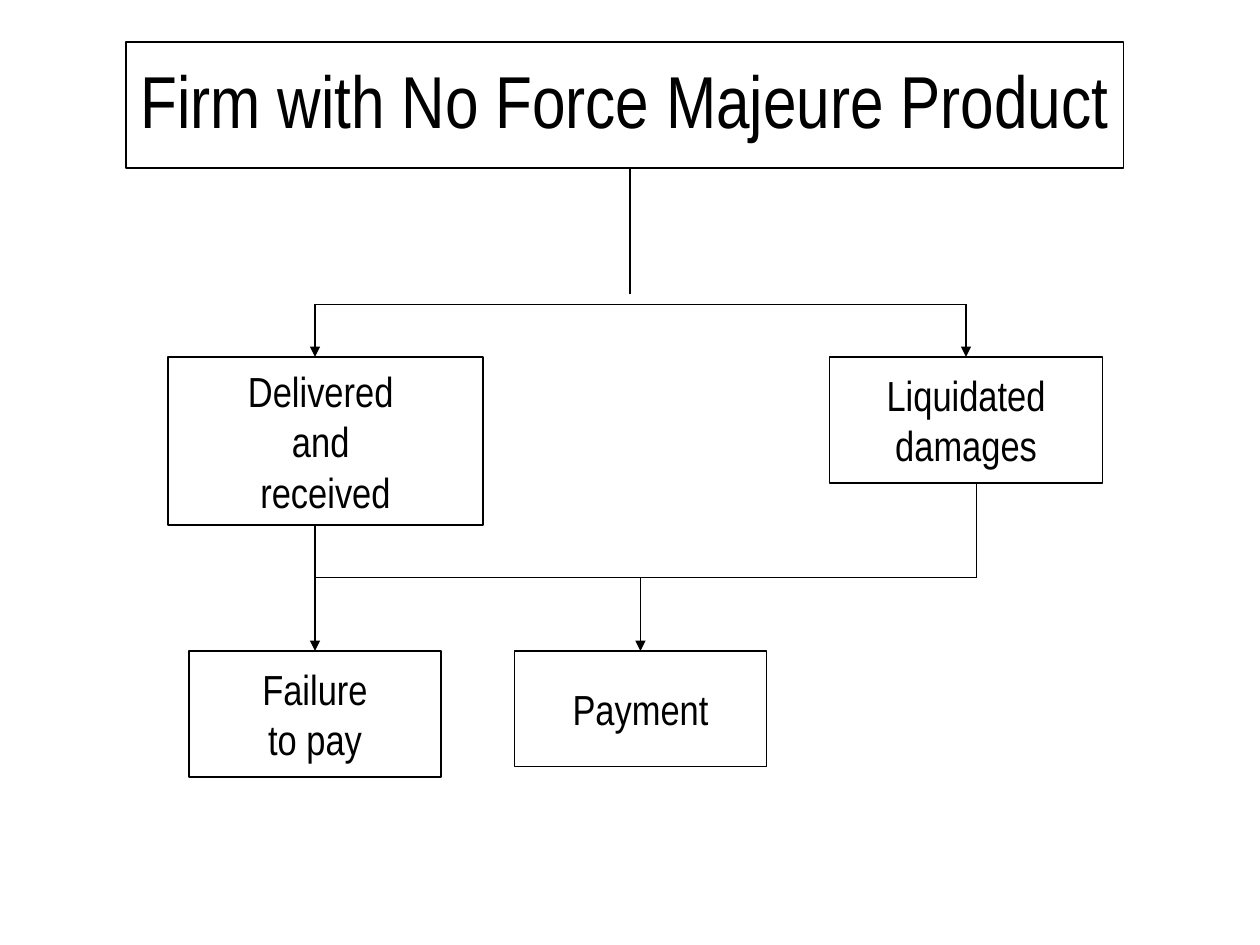
import pptx
import pptx.util
import pptx.dml.color
import pptx.enum.shapes
import pptx.enum.text
import pptx.oxml
import pptx.oxml.ns

PX = 7620  # EMU per px: 120 px to the inch
BLACK = pptx.dml.color.RGBColor(0x00, 0x00, 0x00)
WHITE = pptx.dml.color.RGBColor(0xFF, 0xFF, 0xFF)
FONT = "Arial Narrow"


def write_text(frame, text, size=24, spacing=None, wrap=False):
    """Fill a text frame with centred text, one paragraph a line."""
    frame.word_wrap = wrap
    frame.auto_size = pptx.enum.text.MSO_AUTO_SIZE.NONE
    frame.vertical_anchor = pptx.enum.text.MSO_ANCHOR.MIDDLE
    frame.text = text
    for paragraph in frame.paragraphs:
        paragraph.alignment = pptx.enum.text.PP_ALIGN.CENTER
        paragraph.line_spacing = spacing
        for run in paragraph.runs:
            run.font.name = FONT
            run.font.size = pptx.util.Pt(size)
            run.font.color.rgb = BLACK


class FlowChart:
    def __init__(self, slide, line_width=0.75):
        self.slide = slide
        self.line_width = pptx.util.Pt(line_width)

    def outline(self, line):
        line.color.rgb = BLACK
        line.width = self.line_width

    def title(self, text, left, top, width, height):
        heading = self.slide.shapes.title
        heading.left, heading.top = left * PX, top * PX
        heading.width, heading.height = width * PX, height * PX
        self.outline(heading.line)
        write_text(heading.text_frame, text, size=42, spacing=0.9)

    def box(self, text, left, top, width, height):
        step = self.slide.shapes.add_shape(
            pptx.enum.shapes.MSO_SHAPE.RECTANGLE,
            left * PX, top * PX, width * PX, height * PX)
        step.shadow.inherit = False
        step.fill.solid()
        step.fill.fore_color.rgb = WHITE
        self.outline(step.line)
        write_text(step.text_frame, text)

    def link(self, x1, y1, x2, y2, arrow=False):
        connector = self.slide.shapes.add_connector(
            pptx.enum.shapes.MSO_CONNECTOR.STRAIGHT,
            x1 * PX, y1 * PX, x2 * PX, y2 * PX)
        self.outline(connector.line)
        properties = connector._element.spPr
        if arrow:
            head = pptx.oxml.parse_xml(
                f'<a:tailEnd {pptx.oxml.ns.nsdecls("a")} type="triangle"/>')
            connector.line._get_or_add_ln().append(head)
        properties.append(pptx.oxml.parse_xml(
            f'<a:effectLst {pptx.oxml.ns.nsdecls("a")}/>'))


def main():
    deck = pptx.Presentation()
    deck.slide_width, deck.slide_height = 1200 * PX, 900 * PX
    chart = FlowChart(deck.slides.add_slide(deck.slide_layouts[5]))

    chart.title("Firm with No Force Majeure Product", 120, 40, 950, 120)

    # Outcomes, then what follows from them
    chart.box("Delivered \nand \nreceived", 160, 340, 300, 160)
    chart.box("Liquidated\ndamages", 790, 340, 260, 120)
    chart.box("Failure\nto pay", 180, 620, 240, 120)
    chart.box("Payment", 490, 620, 240, 110)

    delivered_x, payment_x, damages_x = 300, 610, 920
    split_y, join_y = 290, 550

    # Title to the two outcomes
    chart.link(600, 160, 600, 280)
    chart.link(delivered_x, split_y, damages_x, split_y)
    for x in (delivered_x, damages_x):
        chart.link(x, split_y, x, 340, arrow=True)

    # Outcomes to failure and payment
    chart.link(930, 460, 930, join_y)
    chart.link(delivered_x, join_y, 930, join_y)
    chart.link(delivered_x, 500, delivered_x, 620, arrow=True)
    chart.link(payment_x, join_y, payment_x, 620, arrow=True)

    deck.save("out.pptx")


if __name__ == "__main__":
    main()
